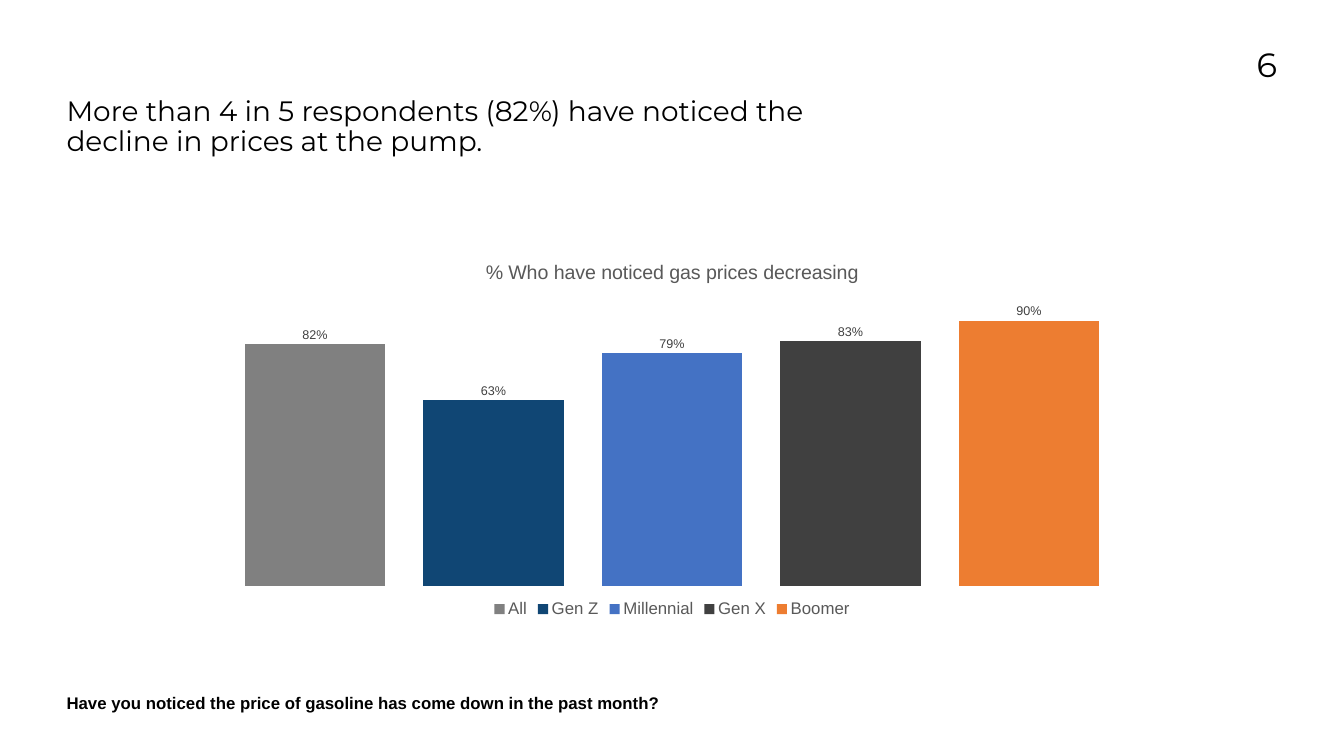
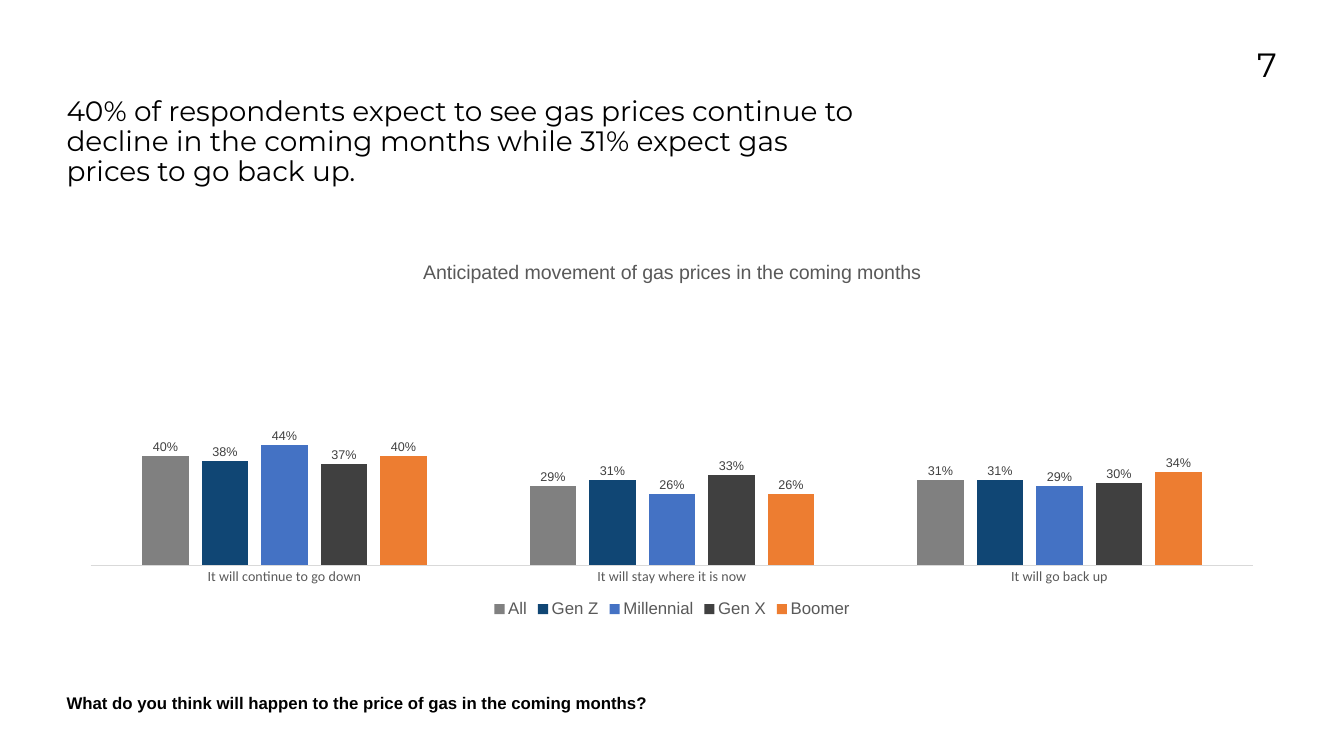
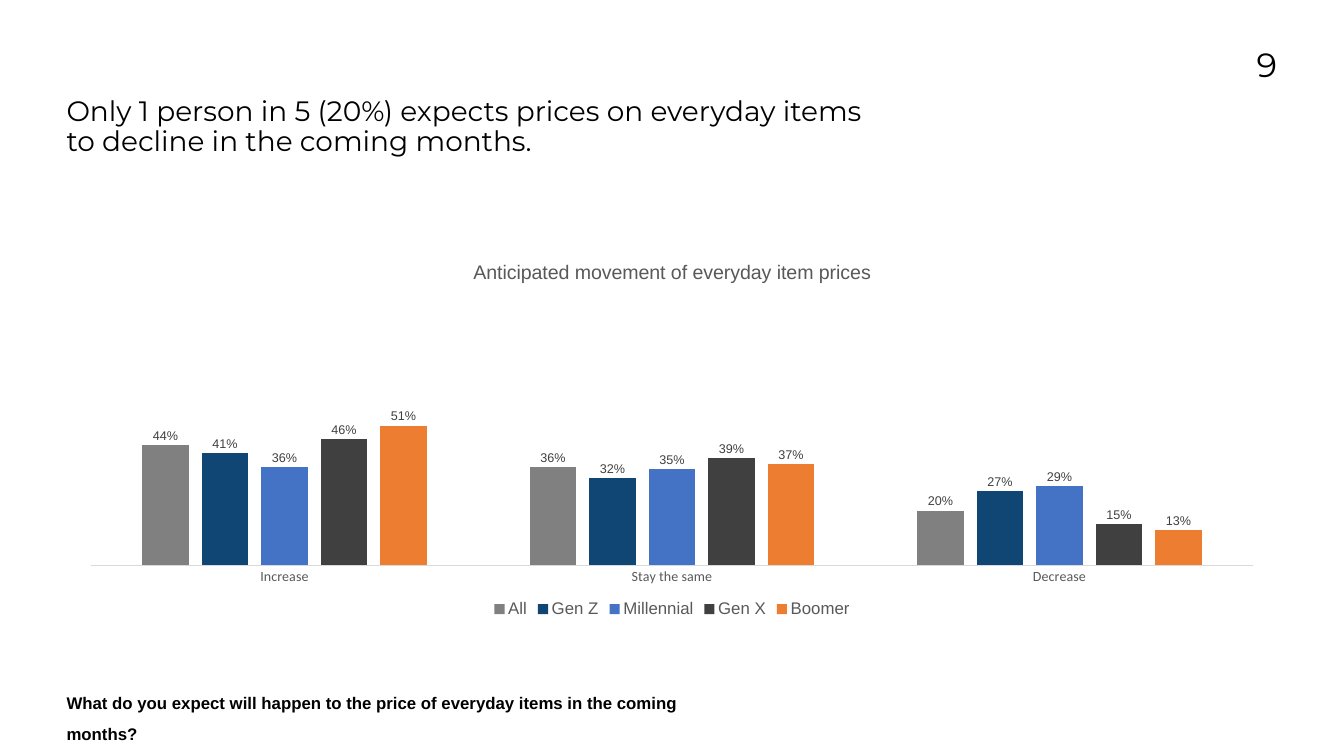
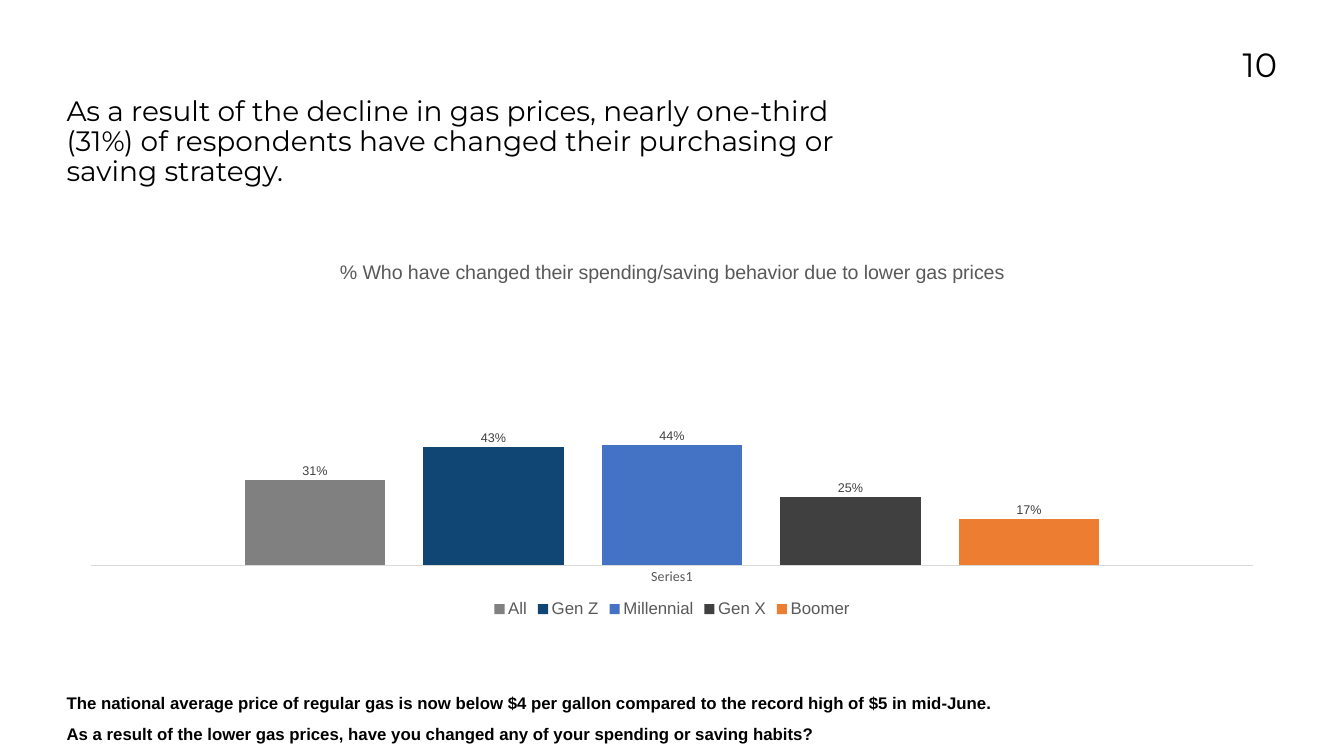
from lxml import etree
from pptx import Presentation
from pptx.chart.data import CategoryChartData
from pptx.dml.color import RGBColor
from pptx.enum.chart import XL_CHART_TYPE as ChartType
from pptx.enum.chart import XL_LABEL_POSITION as LabelPosition
from pptx.enum.chart import XL_LEGEND_POSITION as LegendPosition
from pptx.enum.chart import XL_TICK_MARK as TickMark
from pptx.enum.text import PP_ALIGN as Align
from pptx.oxml.ns import qn
from pptx.util import Inches, Pt

COLORS = {
    "text": "000000",
    "muted": "595959",
    "label": "404040",
    "axis": "D9D9D9",
}

GENERATIONS = {
    "All": "808080",
    "Gen Z": "104674",
    "Millennial": "4472C4",
    "Gen X": "404040",
    "Boomer": "ED7D31",
}

FONTS = {
    "number": {"name": "Montserrat", "size": 48, "color": "text"},
    "headline": {"name": "Montserrat", "size": 40, "color": "text"},
    "question": {"name": "Arial", "size": 24, "color": "text", "bold": True},
    "chart": {"name": "Calibri", "size": 10, "color": "text"},
    "chart_title": {"name": "Arial", "size": 28, "color": "muted", "bold": False},
    "legend": {"name": "Arial", "size": 24, "color": "muted"},
    "category": {"name": "Calibri", "size": 20, "color": "muted"},
    "value": {"name": "Arial", "size": 18, "color": "label"},
}

LEFT = 1.32
PERCENT = "0%"

SLIDES = [
    {
        "number": "6",
        "headline": "More than 4 in 5 respondents (82%) have noticed the decline in prices at the pump.",
        "title": "% Who have noticed gas prices decreasing",
        "categories": ["1"],
        "values": [[0.82], [0.63], [0.79], [0.83], [0.9]],
        "show_categories": False,
        "question": "Have you noticed the price of gasoline has come down in the past month?",
    },
    {
        "number": "7",
        "headline": "40% of respondents expect to see gas prices continue to decline in the coming "
                    "months while 31% expect gas prices to go back up.",
        "title": "Anticipated movement of gas prices in the coming months",
        "categories": ["It will continue to go down", "It will stay where it is now", "It will go back up"],
        "values": [
            [0.4, 0.29, 0.31],
            [0.38, 0.31, 0.31],
            [0.44, 0.26, 0.29],
            [0.37, 0.33, 0.3],
            [0.4, 0.26, 0.34],
        ],
        "question": "What do you think will happen to the price of gas in the coming months?",
    },
    {
        "number": "9",
        "headline": "Only 1 person in 5 (20%) expects prices on everyday items to decline in the coming months.",
        "title": "Anticipated movement of everyday item prices",
        "categories": ["Increase", "Stay the same", "Decrease"],
        "values": [
            [0.44, 0.36, 0.2],
            [0.41, 0.32, 0.27],
            [0.36, 0.35, 0.29],
            [0.46, 0.39, 0.15],
            [0.51, 0.37, 0.13],
        ],
        "question": "What do you expect will happen to the price of everyday items in the coming months?",
    },
    {
        "number": "10",
        "headline": "As a result of the decline in gas prices, nearly one-third (31%) of respondents "
                    "have changed their purchasing or saving strategy.",
        "title": "% Who have changed their spending/saving behavior due to lower gas prices",
        "categories": ["Series1"],
        "values": [[0.31], [0.43], [0.44], [0.25], [0.17]],
        "question": "The national average price of regular gas is now below $4 per gallon compared to "
                    "the record high of $5 in mid-June.\n"
                    "As a result of the lower gas prices, have you changed any of your spending or saving habits?",
        "question_width": 18.75,
    },
]


def set_attributes(target, values):
    for name, value in values.items():
        setattr(target, name, value)


def rgb(name):
    return RGBColor.from_string(COLORS.get(name, name))


class Deck:
    def __init__(self):
        self.presentation = Presentation()
        set_attributes(self.presentation, {"slide_width": Inches(26.67), "slide_height": Inches(15)})
        self.slide = None

    def add_slide(self):
        self.slide = self.presentation.slides.add_slide(self.presentation.slide_layouts[6])

    def style_font(self, font, style):
        values = dict(FONTS[style])
        font.color.rgb = rgb(values.pop("color"))
        values["size"] = Pt(values["size"])
        set_attributes(font, values)

    def text(self, content, style, box, **paragraph_format):
        shape = self.slide.shapes.add_textbox(*map(Inches, box))
        frame = shape.text_frame
        margins = ("margin_left", "margin_top", "margin_right", "margin_bottom")
        set_attributes(frame, {"word_wrap": True, **dict.fromkeys(margins, 0)})
        paragraph = frame.paragraphs[0]
        paragraph.text = content
        set_attributes(paragraph, paragraph_format)
        for run in paragraph.runs:
            self.style_font(run.font, style)

    def column_chart(self, title, categories, values, show_categories):
        data = CategoryChartData(number_format=PERCENT)
        data.categories = categories
        for name, shares in zip(GENERATIONS, values):
            data.add_series(name, shares)
        box = map(Inches, (LEFT, 4.88, 24.03, 7.46))
        chart = self.slide.shapes.add_chart(ChartType.COLUMN_CLUSTERED, *box, data).chart
        self.style_font(chart.font, "chart")

        chart.has_title = True
        paragraph = chart.chart_title.text_frame.paragraphs[0]
        paragraph.text = title
        self.style_font(paragraph.runs[0].font, "chart_title")

        chart.has_legend = True
        set_attributes(chart.legend, {"position": LegendPosition.BOTTOM, "include_in_layout": False})
        self.style_font(chart.legend.font, "legend")

        set_attributes(chart.value_axis, {
            "visible": False, "has_major_gridlines": False, "minimum_scale": 0, "maximum_scale": 1,
        })
        set_attributes(chart.value_axis.tick_labels, {"number_format": PERCENT, "number_format_is_linked": False})
        axis = chart.category_axis
        set_attributes(axis, {"visible": show_categories, "major_tick_mark": TickMark.NONE})
        self.style_font(axis.tick_labels.font, "category")
        axis.format.line.color.rgb = rgb("axis")
        axis.format.line.width = Pt(0.75)

        plot = chart.plots[0]
        set_attributes(plot, {"gap_width": 219, "overlap": -27, "vary_by_categories": False})
        for series, color in zip(plot.series, GENERATIONS.values()):
            series.format.fill.solid()
            series.format.fill.fore_color.rgb = rgb(color)
            labels = series.data_labels
            set_attributes(labels, {
                "show_value": True, "position": LabelPosition.OUTSIDE_END,
                "number_format": PERCENT, "number_format_is_linked": False,
            })
            self.style_font(labels.font, "value")
        self.place_plot(chart, 0.73 if show_categories else 0.785)

    def place_plot(self, chart, height):
        area = chart.element.find(".//" + qn("c:plotArea"))
        for layout in area.findall(qn("c:layout")):
            area.remove(layout)
        layout = etree.Element(qn("c:layout"))
        area.insert(0, layout)
        manual = etree.SubElement(layout, qn("c:manualLayout"))
        settings = {
            "layoutTarget": "inner", "xMode": "edge", "yMode": "edge",
            "x": 0.02, "y": 0.12, "w": 0.96, "h": height,
        }
        for name, value in settings.items():
            etree.SubElement(manual, qn("c:" + name)).set("val", str(value))

    def survey_slide(self, number, headline, title, categories, values, question,
                     show_categories=True, question_width=13.27):
        self.add_slide()
        self.text(number, "number", (23.09, 0.88, 2.25, 1.64), alignment=Align.RIGHT)
        self.column_chart(title, categories, values, show_categories)
        self.text(headline, "headline", (LEFT, 1.93, 16.01, 2.08), line_spacing=0.9)
        self.text(question, "question", (LEFT, 13.55, question_width, 0.65), line_spacing=1.5)


def main():
    deck = Deck()
    for content in SLIDES:
        deck.survey_slide(**content)
    deck.presentation.save("out.pptx")


if __name__ == "__main__":
    main()
